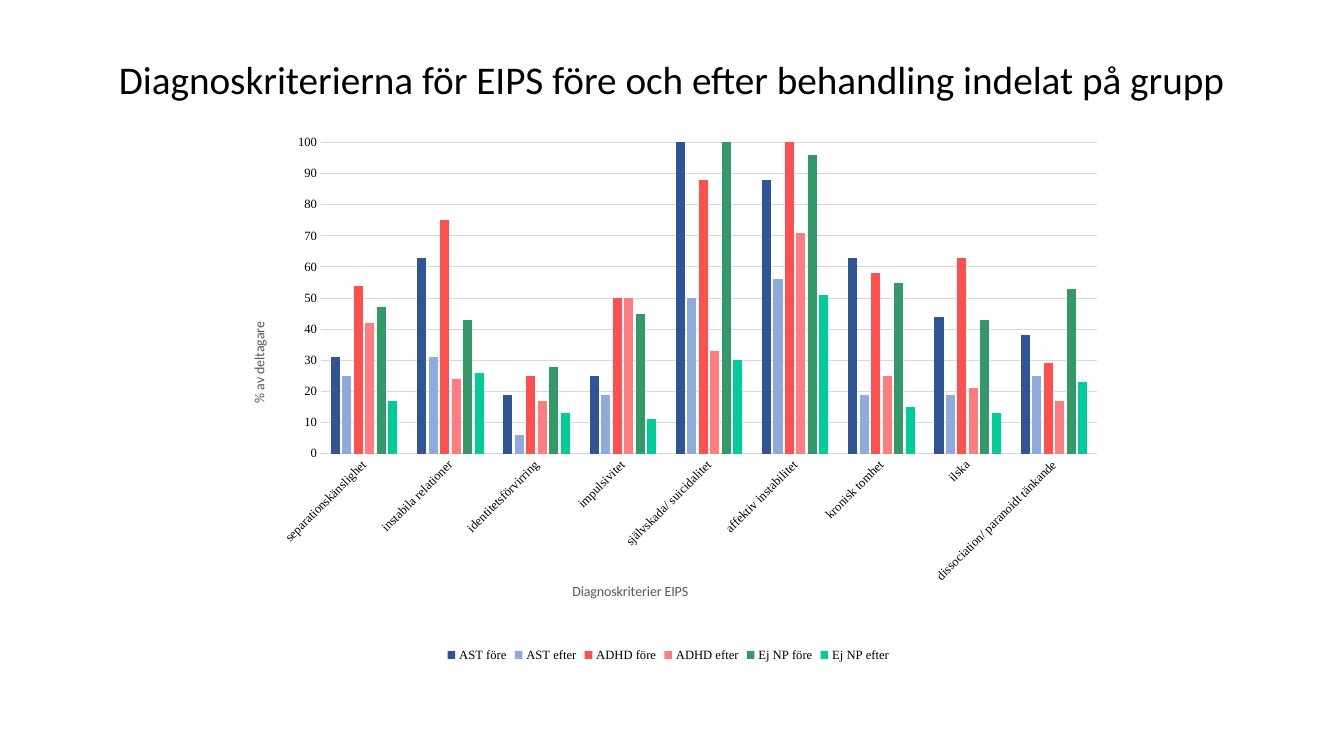
from dataclasses import dataclass

from lxml.etree import SubElement
from pptx import Presentation
from pptx.chart.data import CategoryChartData
from pptx.dml.color import RGBColor as RGB
from pptx.enum.chart import XL_CHART_TYPE as ChartType
from pptx.enum.chart import XL_LEGEND_POSITION as LegendPos
from pptx.enum.chart import XL_TICK_MARK as Tick
from pptx.oxml.ns import qn
from pptx.util import Pt


@dataclass(frozen=True)
class Theme:
    text: str = "000000"
    muted: str = "595959"
    rule: str = "D9D9D9"
    sans: str = "Calibri"
    serif: str = "Times New Roman"
    title_size: float = 28
    axis_title_size: float = 10
    label_size: float = 9
    rule_width: float = 0.75


@dataclass(frozen=True)
class Group:
    name: str
    color: str
    values: tuple[int, ...]


@dataclass(frozen=True)
class AxisTitle:
    text: str
    x: float
    y: float
    rotation: int


THEME = Theme()
CRITERIA = (
    "separationskänslighet", "instabila relationer", "identitetsförvirring",
    "impulsivitet", "självskada/ suicidalitet", "affektiv instabilitet",
    "kronisk tomhet", "ilska", "dissociation/ paranoidt tänkande",
)
GROUPS = (
    Group("AST före", "2F5597", (31, 63, 19, 25, 100, 88, 63, 44, 38)),
    Group("AST efter", "8FAADC", (25, 31, 6, 19, 50, 56, 19, 19, 25)),
    Group("ADHD före", "FF5050", (54, 75, 25, 50, 88, 100, 58, 63, 29)),
    Group("ADHD efter", "FF7C80", (42, 24, 17, 50, 33, 71, 25, 21, 17)),
    Group("Ej NP före", "339966", (47, 43, 28, 45, 100, 96, 55, 43, 53)),
    Group("Ej NP efter", "00CC99", (17, 26, 13, 11, 30, 51, 15, 13, 23)),
)
CRITERIA_TITLE = AxisTitle("Diagnoskriterier EIPS", 0.39, 0.84, 0)
SHARE_TITLE = AxisTitle("% av deltagare", 0.03, 0.36, -90)


def style_font(font, size: float, name: str, color: str = THEME.text) -> None:
    for key, value in {"size": Pt(size), "name": name, "bold": False}.items():
        setattr(font, key, value)
    font.color.rgb = RGB.from_string(color)


def style_line(line) -> None:
    line.color.rgb = RGB.from_string(THEME.rule)
    line.width = Pt(THEME.rule_width)


def set_layout(parent, index: int, **fractions: float) -> None:
    """Place a chart part by fractions of the chart; index is its XML slot."""
    for old in parent.findall(qn("c:layout")):
        parent.remove(old)
    layout = SubElement(parent, qn("c:layout"))
    parent.insert(index, layout)
    manual = SubElement(layout, qn("c:manualLayout"))
    settings = {"xMode": "edge", "yMode": "edge", **fractions}
    if "w" in fractions:
        settings = {"layoutTarget": "inner", **settings}
    for key, value in settings.items():
        SubElement(manual, qn(f"c:{key}")).set("val", str(value))


def rotate_text(element, degrees: int) -> None:
    body = next(element.iter(qn("a:bodyPr")))
    body.set("rot", str(degrees * 60000))
    body.set("vert", "horz")


def style_axis(axis, title: AxisTitle) -> None:
    for key in ("major_tick_mark", "minor_tick_mark"):
        setattr(axis, key, Tick.NONE)
    style_font(axis.tick_labels.font, THEME.label_size, THEME.serif)
    tf = axis.axis_title.text_frame
    tf.text = title.text
    style_font(tf.paragraphs[0].runs[0].font, THEME.axis_title_size,
               THEME.sans, THEME.muted)
    element = axis.axis_title._element
    rotate_text(element, title.rotation)
    set_layout(element, 1, x=title.x, y=title.y)


def add_title(slide, text: str) -> None:
    tf = slide.shapes.add_textbox(Pt(77.8), Pt(36), Pt(838), Pt(41)).text_frame
    tf.word_wrap = True
    r = tf.paragraphs[0].add_run()
    r.text = text
    style_font(r.font, THEME.title_size, THEME.sans)


def add_criteria_chart(slide) -> None:
    data = CategoryChartData()
    data.categories = CRITERIA
    for group in GROUPS:
        data.add_series(group.name, group.values)
    chart = slide.shapes.add_chart(
        ChartType.COLUMN_CLUSTERED, Pt(157.7), Pt(88.6), Pt(639.4), Pt(387.4), data
    ).chart
    style_font(chart.font, THEME.axis_title_size, THEME.sans)
    chart.has_title = False
    chart.has_legend = True
    chart.legend.position = LegendPos.BOTTOM
    chart.legend.include_in_layout = False
    style_font(chart.legend.font, THEME.label_size, THEME.serif)

    plot = chart.plots[0]
    for key, value in {"gap_width": 219, "overlap": -27,
                       "vary_by_categories": False}.items():
        setattr(plot, key, value)
    for series, group in zip(plot.series, GROUPS):
        series.format.fill.solid()
        series.format.fill.fore_color.rgb = RGB.from_string(group.color)

    criteria, share = chart.category_axis, chart.value_axis
    style_axis(criteria, CRITERIA_TITLE)
    style_line(criteria.format.line)
    rotate_text(criteria._element.find(qn("c:txPr")), -45)
    style_axis(share, SHARE_TITLE)
    share.format.line.fill.background()
    for key, value in {"minimum_scale": 0, "maximum_scale": 100,
                       "major_unit": 10, "has_major_gridlines": True}.items():
        setattr(share, key, value)
    style_line(share.major_gridlines.format.line)
    plot_area = chart._chartSpace.chart.plotArea
    set_layout(plot_area, 0, x=0.112, y=0.034, w=0.867, h=0.574)


def main() -> None:
    prs = Presentation()
    prs.slide_width, prs.slide_height = Pt(960), Pt(540)
    slide = prs.slides.add_slide(prs.slide_layouts[6])
    add_criteria_chart(slide)
    add_title(slide, "Diagnoskriterierna för EIPS före och efter behandling "
                     "indelat på grupp")
    prs.save("out.pptx")


if __name__ == "__main__":
    main()
